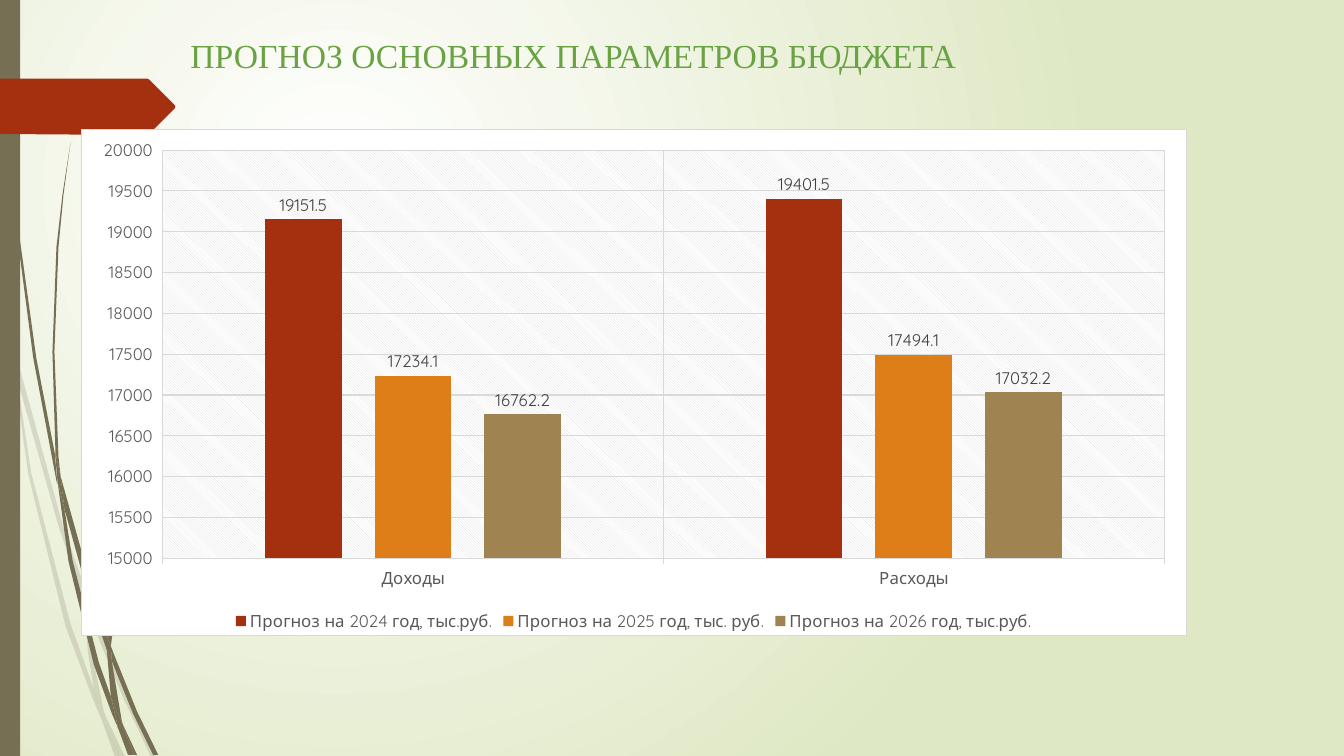
from pptx import Presentation
from pptx.chart.data import CategoryChartData
from pptx.dml.color import RGBColor
from pptx.enum.chart import XL_CHART_TYPE as ChartType, XL_LABEL_POSITION as LabelSpot
from pptx.enum.chart import XL_LEGEND_POSITION as LegendSpot, XL_TICK_MARK as Tick
from pptx.enum.shapes import MSO_SHAPE as Preset
from pptx.enum.text import MSO_ANCHOR as Anchor, MSO_AUTO_SIZE as AutoSize, PP_ALIGN as Align
from pptx.oxml import parse_xml
from pptx.oxml.ns import nsdecls, qn
from pptx.util import Pt

PX = 9144
OLIVE, RUST, GREEN, GRID = "766F54", "A53010", "6AA343", "D9D9D9"
AXIS_TEXT, LABEL_TEXT = "595959", "404040"
CHART_FONT = "Quicksand"

PALE_STEMS = [
    [(11, 350), (9, 322), (0, 282), (0, 299), (10, 344)],
    [(58, 522), (84, 599), (85, 586), (62, 520), (14, 345), (17, 376)],
    [(92, 607), (88, 596), (88, 610), (123, 694), (150, 751), (155, 751), (127, 692)],
    [(119, 751), (124, 751), (105, 711)],
    [(93, 683), (70, 619), (31, 469), (17, 376), (11, 350), (28, 470), (65, 621),
     (92, 693), (101, 714), (99, 707)],
    [(84, 599), (87, 646), (93, 683), (96, 692), (105, 711), (103, 706), (91, 646),
     (88, 610), (88, 608)],
    [(88, 584), (110, 462), (160, 349), (229, 245), (268, 198), (290, 175), (312, 154),
     (312, 153), (289, 175), (268, 197), (228, 244), (158, 348), (107, 461), (85, 584),
     (85, 586), (88, 596)],
    [(101, 714), (114, 751), (119, 751)],
    [(88, 608), (88, 610), (88, 596), (85, 586), (84, 599)],
    [(96, 692), (93, 683), (99, 707), (101, 714), (119, 751), (105, 711)],
]
DARK_STEMS = [
    [(7, 110), (17, 233), (33, 355), (56, 477), (57, 481), (55, 457), (55, 453), (36, 355),
     (19, 232), (8, 109), (5, 48), (4, 0), (3, 0), (4, 48)],
    [(88, 592), (106, 645), (106, 633), (106, 631), (93, 590), (60, 472), (64, 505)],
    [(113, 649), (110, 641), (111, 656), (132, 708), (152, 749), (157, 749), (136, 706)],
    [(110, 691), (98, 657), (72, 556), (64, 505), (57, 477), (68, 557), (93, 659),
     (111, 708), (117, 722), (116, 717)],
    [(60, 472), (58, 453), (54, 349), (58, 245), (63, 193), (70, 141), (62, 193), (56, 245),
     (52, 349), (55, 449)],
    [(133, 749), (136, 749), (122, 719)],
    [(57, 477), (64, 505), (60, 472), (55, 449), (55, 453)],
    [(111, 633), (125, 552), (158, 476), (205, 406), (231, 374), (245, 359), (261, 344),
     (260, 344), (245, 358), (231, 373), (204, 405), (156, 474), (122, 551), (106, 631),
     (110, 641)],
    [(117, 722), (127, 749), (131, 749)],
    [(106, 645), (110, 691), (116, 706), (122, 719), (121, 716), (111, 656), (109, 651)],
    [(106, 645), (109, 651), (111, 656), (110, 641), (106, 631), (106, 633)],
    [(116, 706), (110, 691), (116, 717), (117, 722), (130, 749), (133, 749), (122, 719)],
]
TITLE_ARROW = [(0, 78), (146, 78), (148, 79), (173, 104), (174, 106), (173, 108),
               (148, 133), (146, 134), (136, 134), (0, 133)]

CATEGORIES = ["Доходы", "Расходы"]
FORECASTS = [
    ("Прогноз на 2024 год, тыс.руб.", (19151.5, 19401.5), RUST),
    ("Прогноз на 2025 год, тыс. руб.", (17234.1, 17494.1), "DE7E18"),
    ("Прогноз на 2026 год, тыс.руб.", (16762.2, 17032.2), "9F8351"),
]


def rgb(color):
    return RGBColor.from_string(color)


def px(*lengths):
    return [length * PX for length in lengths]


def set_background(page):
    page.background.fill.solid()
    holder = page.element.find(".//" + qn("p:bgPr"))
    gradient = parse_xml(
        f'<a:gradFill {nsdecls("a")} rotWithShape="1"><a:gsLst>'
        '<a:gs pos="0"><a:srgbClr val="FFFFFF"/></a:gs>'
        '<a:gs pos="100000"><a:srgbClr val="DFE8C4"/></a:gs></a:gsLst>'
        '<a:path path="circle"><a:fillToRect l="50000" t="50000" r="100000" b="100000"/>'
        '</a:path></a:gradFill>')
    holder.replace(holder[0], gradient)


def paint(shape, color, opacity=100):
    shape.shadow.inherit = False
    shape.line.fill.background()
    shape.fill.solid()
    shape.fill.fore_color.rgb = rgb(color)
    if opacity < 100:
        tint = shape.element.spPr.find(".//" + qn("a:srgbClr"))
        tint.append(parse_xml(f'<a:alpha {nsdecls("a")} val="{opacity * 1000}"/>'))


def add_outline(page, points, color, opacity=100):
    builder = page.shapes.build_freeform(*points[0], scale=PX)
    builder.add_line_segments(points[1:], close=True)
    paint(builder.convert_to_shape(), color, opacity)


def set_title(page, text):
    box = page.shapes.title
    box.left, box.top, box.width, box.height = px(129, 30, 879, 98)
    frame = box.text_frame
    frame.word_wrap = True
    frame.auto_size = AutoSize.NONE
    frame.vertical_anchor = Anchor.TOP
    para = frame.paragraphs[0]
    para.alignment = Align.CENTER
    span = para.add_run()
    span.text = text
    style_font(span.font, GREEN, 24, "Times New Roman")


def style_font(font, color, size=12, name=CHART_FONT):
    font.name = name
    font.size = Pt(size)
    font.bold = False
    font.color.rgb = rgb(color)


def style_line(line):
    line.color.rgb = rgb(GRID)
    line.width = Pt(0.75)


def style_axis(axis):
    axis.major_tick_mark = Tick.OUTSIDE
    axis.minor_tick_mark = Tick.NONE
    axis.has_major_gridlines = True
    style_line(axis.major_gridlines.format.line)
    style_font(axis.tick_labels.font, AXIS_TEXT)


def style_series(series, color):
    series.format.fill.solid()
    series.format.fill.fore_color.rgb = rgb(color)
    labels = series.data_labels
    labels.show_value = True
    labels.position = LabelSpot.OUTSIDE_END
    style_font(labels.font, LABEL_TEXT)


def fill_chart_areas(chart):
    frame = chart.element.find(qn("c:chart"))
    frame.addnext(parse_xml(
        f'<c:spPr {nsdecls("c", "a")}><a:solidFill><a:srgbClr val="FFFFFF"/></a:solidFill>'
        f'<a:ln w="9525"><a:solidFill><a:srgbClr val="{GRID}"/></a:solidFill></a:ln></c:spPr>'))
    frame.find(qn("c:plotArea")).append(parse_xml(
        f'<c:spPr {nsdecls("c", "a")}><a:pattFill prst="ltDnDiag">'
        f'<a:fgClr><a:srgbClr val="{GRID}"/></a:fgClr>'
        '<a:bgClr><a:srgbClr val="FFFFFF"/></a:bgClr></a:pattFill>'
        '<a:ln><a:noFill/></a:ln></c:spPr>'))


def add_budget_chart(page):
    data = CategoryChartData()
    data.categories = CATEGORIES
    for name, values, _ in FORECASTS:
        data.add_series(name, values)
    chart = page.shapes.add_chart(
        ChartType.COLUMN_CLUSTERED, *px(80, 128, 1097, 503), data).chart
    style_font(chart.font, "000000", 10)
    chart.has_title = False
    chart.has_legend = True
    chart.legend.position = LegendSpot.BOTTOM
    chart.legend.include_in_layout = False
    style_font(chart.legend.font, AXIS_TEXT)
    plot = chart.plots[0]
    plot.gap_width = 267
    plot.overlap = -43
    plot.vary_by_categories = False
    for series, (_, _, color) in zip(plot.series, FORECASTS):
        style_series(series, color)
    style_axis(chart.category_axis)
    style_line(chart.category_axis.format.line)
    scale = chart.value_axis
    style_axis(scale)
    scale.format.line.fill.background()
    scale.minimum_scale, scale.maximum_scale, scale.major_unit = 15000, 20000, 500
    fill_chart_areas(chart)


def main():
    deck = Presentation()
    deck.slide_width, deck.slide_height = px(1333, 750)
    page = deck.slides.add_slide(deck.slide_layouts[5])
    set_background(page)
    for points in PALE_STEMS:
        add_outline(page, points, OLIVE, 20)
    for points in DARK_STEMS:
        add_outline(page, points, OLIVE)
    paint(page.shapes.add_shape(Preset.RECTANGLE, *px(0, 0, 20, 750)), OLIVE)
    add_outline(page, TITLE_ARROW, RUST)
    set_title(page, "ПРОГНОЗ ОСНОВНЫХ ПАРАМЕТРОВ БЮДЖЕТА")
    add_budget_chart(page)
    deck.save("out.pptx")


if __name__ == "__main__":
    main()
